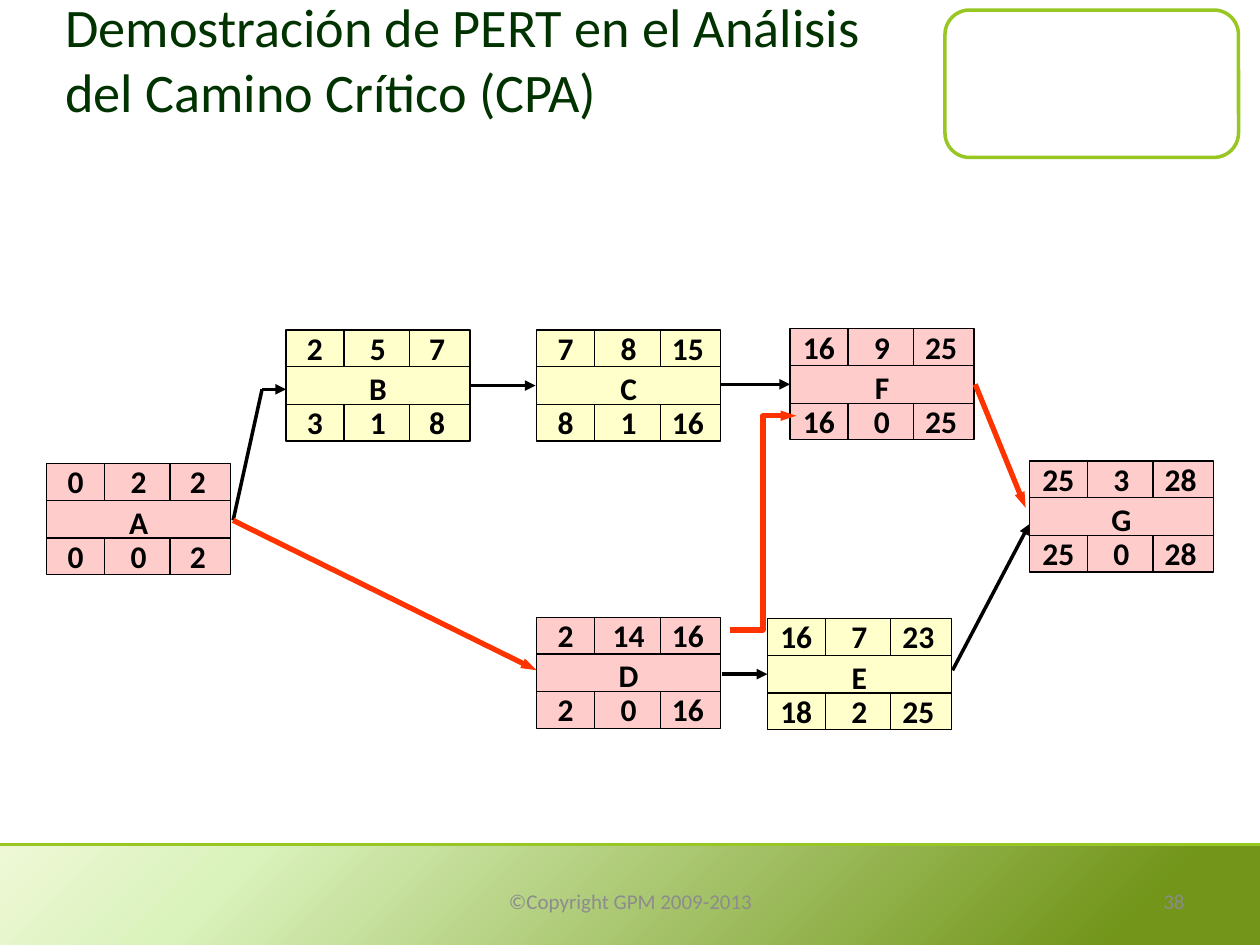
from lxml import etree
from pptx import Presentation
from pptx.dml.color import RGBColor
from pptx.enum.shapes import MSO_CONNECTOR, MSO_SHAPE
from pptx.enum.text import MSO_ANCHOR, MSO_AUTO_SIZE, PP_ALIGN
from pptx.oxml import parse_xml
from pptx.oxml.ns import nsdecls, qn
from pptx.util import Inches, Pt

LEFT, CENTER, RIGHT = PP_ALIGN.LEFT, PP_ALIGN.CENTER, PP_ALIGN.RIGHT
MIDDLE = MSO_ANCHOR.MIDDLE
NO_AUTOFIT = MSO_AUTO_SIZE.NONE
STRAIGHT, ELBOW = MSO_CONNECTOR.STRAIGHT, MSO_CONNECTOR.ELBOW
RECTANGLE, ROUNDED = MSO_SHAPE.RECTANGLE, MSO_SHAPE.ROUNDED_RECTANGLE

WIDTH, HEIGHT = 10, 7.5
TITLE_ONLY_LAYOUT = 5
FONT = "Calibri"
COLORS = {
    "black": "000000", "white": "FFFFFF", "green": "98C723",
    "title": "003300", "footer": "8C8C8C",
    "critical": "FFCCCC", "slack": "FFFFCC", "critical path": "FF3300",
}
FOOTER_STOPS = [(0, "EEF8D5"), (19, "DAF2BC"), (89, "72951A")]

# Activity box: three columns, three rows, offsets from its top left corner
BOX_WIDTH, BOX_HEIGHT = 1.46, 0.88
COLUMN_LINES, ROW_LINES = (0.46, 0.98), (0.29, 0.59)
COLUMN_CENTERS, ROW_CENTERS = (0.23, 0.73, 1.2), (0.14, 0.46, 0.73)
LABEL_WIDTH, LABEL_HEIGHT = 0.46, 0.4

# name, left, top, kind, upper values, lower values
ACTIVITIES = [
    ("A", 0.37, 3.68, "critical", (0, 2, 2), (0, 0, 2)),
    ("B", 2.27, 2.62, "slack", (2, 5, 7), (3, 1, 8)),
    ("C", 4.26, 2.62, "slack", (7, 8, 15), (8, 1, 16)),
    ("D", 4.26, 4.9, "critical", (2, 14, 16), (2, 0, 16)),
    ("E", 6.09, 4.91, "slack", (16, 7, 23), (18, 2, 25)),
    ("F", 6.27, 2.61, "critical", (16, 9, 25), (16, 0, 25)),
    ("G", 8.17, 3.66, "critical", (25, 3, 28), (25, 0, 28)),
]
PLAIN_LINKS = [
    ((2.08, 3.09), (2.27, 3.09)),
    ((3.73, 3.06), (4.25, 3.06)),
    ((5.72, 3.05), (6.27, 3.05)),
    ((5.73, 5.35), (6.09, 5.35)),
    ((7.56, 5.32), (8.17, 4.16)),
]
CRITICAL_LINKS = [
    ((1.85, 4.13), (4.26, 5.32), STRAIGHT),
    ((7.74, 3.05), (8.14, 4.03), STRAIGHT),
    ((5.79, 5), (6.32, 3.3), ELBOW),
]


def color(name):
    return RGBColor.from_string(COLORS[name])


def write(shape, text, size=18, bold=False, ink="black", align=CENTER):
    frame = shape.text_frame
    frame.auto_size = NO_AUTOFIT
    frame.word_wrap = True
    frame.vertical_anchor = MIDDLE
    paragraph = frame.paragraphs[0]
    paragraph.text = text
    paragraph.alignment = align
    font = paragraph.font
    font.name, font.size, font.bold = FONT, Pt(size), bold
    font.color.rgb = color(ink)


def add_text(slide, text, left, top, width, height, **style):
    write(slide.shapes.add_textbox(*map(Inches, (left, top, width, height))), text, **style)


def add_panel(slide, kind, left, top, width, height, fill, line=None, weight=0.75):
    shape = slide.shapes.add_shape(kind, *map(Inches, (left, top, width, height)))
    shape.shadow.inherit = False
    shape.fill.solid()
    shape.fill.fore_color.rgb = color(fill)
    if line:
        shape.line.color.rgb = color(line)
        shape.line.width = Pt(weight)
    else:
        shape.line.fill.background()
    return shape


def add_line(slide, start, end, ink="black", weight=0.75, head=None, kind=STRAIGHT):
    """Draw a line; head is the width of its arrowhead, if it has one."""
    line = slide.shapes.add_connector(kind, *map(Inches, (*start, *end)))
    line.line.color.rgb = color(ink)
    line.line.width = Pt(weight)
    properties = line._element.spPr
    if head:
        etree.SubElement(properties.find(qn("a:ln")), qn("a:tailEnd"),
                         type="triangle", w=head, len="med")
    etree.SubElement(properties, qn("a:effectLst"))


def set_gradient(shape, stops, degrees):
    stop_xml = "".join(
        f'<a:gs pos="{share * 1000}"><a:srgbClr val="{value}"/></a:gs>' for share, value in stops)
    gradient = parse_xml(
        f'<a:gradFill {nsdecls("a")} rotWithShape="1"><a:gsLst>{stop_xml}</a:gsLst>'
        f'<a:lin ang="{degrees * 60000}" scaled="0"/></a:gradFill>')
    properties = shape._element.spPr
    properties.replace(properties.find(qn("a:solidFill")), gradient)


def add_frame(slide):
    """Add the corner panel, the footer band and the footer texts."""
    add_panel(slide, ROUNDED, 7.5, 0.08, 2.33, 1.17, "white", "green", 2)
    band = add_panel(slide, RECTANGLE, 0, 6.71, WIDTH, HEIGHT - 6.71, "green")
    set_gradient(band, FOOTER_STOPS, 45)
    add_line(slide, (0, 6.7), (WIDTH, 6.7), "green", 1.5)
    add_text(slide, "©Copyright GPM 2009-2013", 3.42, 6.95, 3.17, 0.4, size=12, ink="footer")
    add_text(slide, "38", 7.17, 6.95, 2.33, 0.4, size=12, ink="footer", align=RIGHT)


def add_title(slide, text):
    title = slide.shapes.title
    title.left, title.top, title.width, title.height = map(Inches, (0.42, 0, 7, 0.92))
    write(title, text, size=31, ink="title", align=LEFT)


def add_activity(slide, name, left, top, kind, upper, lower):
    add_panel(slide, RECTANGLE, left, top, BOX_WIDTH, BOX_HEIGHT, kind, "black")
    for row in ROW_LINES:
        add_line(slide, (left, top + row), (left + BOX_WIDTH, top + row))
    for column in COLUMN_LINES:
        for start, end in ((0, ROW_LINES[0]), (ROW_LINES[1], BOX_HEIGHT)):
            add_line(slide, (left + column, top + start), (left + column, top + end))
    for values, middle in zip((upper, ("", name, ""), lower), ROW_CENTERS):
        for value, center in zip(values, COLUMN_CENTERS):
            if value != "":
                add_text(slide, str(value), left + center - LABEL_WIDTH / 2,
                         top + middle - LABEL_HEIGHT / 2, LABEL_WIDTH, LABEL_HEIGHT, bold=True)


def main():
    presentation = Presentation()
    presentation.slide_width, presentation.slide_height = Inches(WIDTH), Inches(HEIGHT)
    slide = presentation.slides.add_slide(presentation.slide_layouts[TITLE_ONLY_LAYOUT])
    add_frame(slide)
    add_title(slide, "Demostración de PERT en el Análisis del Camino Crítico (CPA)")
    for activity in ACTIVITIES:
        add_activity(slide, *activity)
    add_line(slide, (1.85, 4.13), (2.08, 3.09), weight=2)
    for start, end in PLAIN_LINKS:
        add_line(slide, start, end, weight=2, head="med")
    for start, end, kind in CRITICAL_LINKS:
        add_line(slide, start, end, "critical path", 3, "sm", kind)
    presentation.save("out.pptx")


if __name__ == "__main__":
    main()
